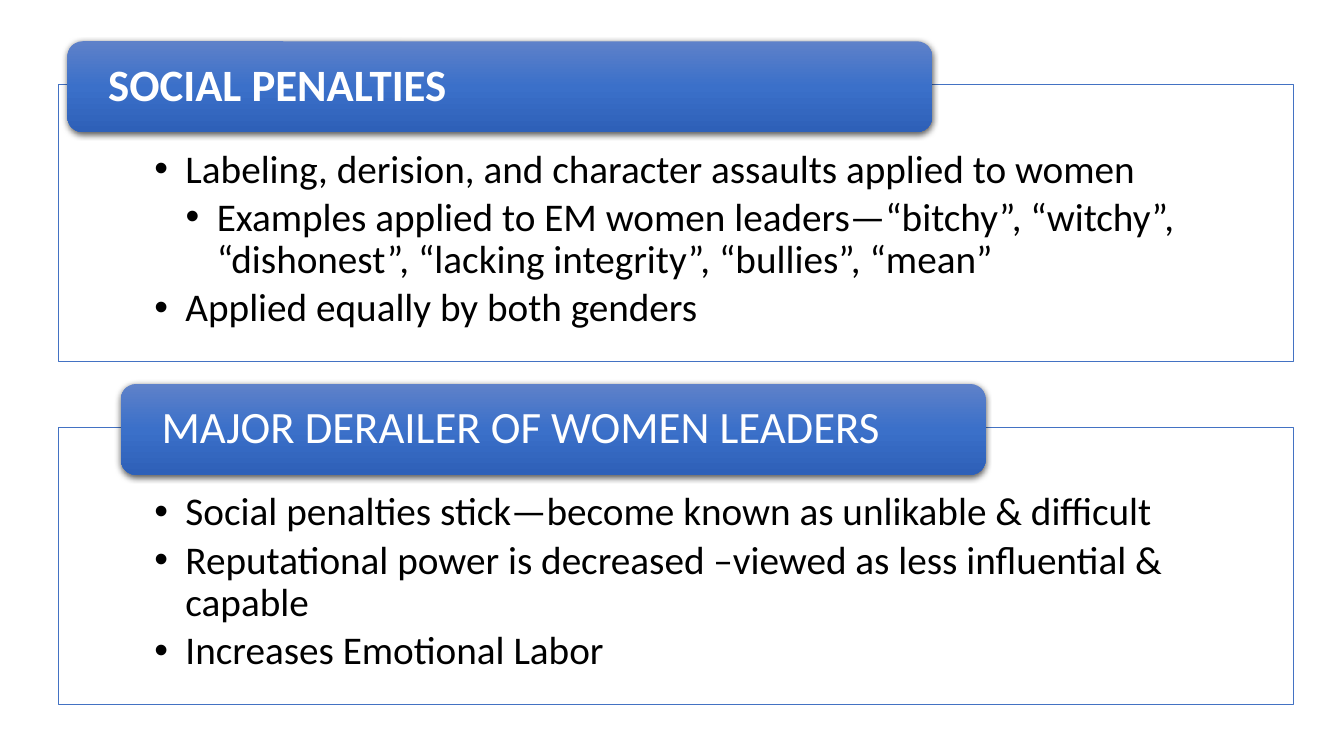
from lxml.etree import SubElement
from pptx import Presentation
from pptx.dml.color import RGBColor
from pptx.enum.shapes import MSO_SHAPE
from pptx.enum.text import MSO_ANCHOR, PP_ALIGN
from pptx.oxml import parse_xml
from pptx.oxml.ns import nsdecls, qn
from pptx.util import Inches, Pt

WIDTH, HEIGHT = 13.33, 7.5
FRAME_LEFT, FRAME_WIDTH, FRAME_HEIGHT = 0.58, 12.25, 2.75
FIRST_TOP, SECTION_STEP = 0.84, 3.4
TAB_WIDTH, TAB_HEIGHT = 0.7 * FRAME_WIDTH, 0.9
TAB_RISE = 0.43
INDENT = 0.31
TAB_GRADIENT = [(0, "5E81C9"), (50, "3B70C9"), (100, "2E60B8")]

# Heading, heading is bold, heading offset from the frame, bullets as (depth, text)
SECTIONS = [
    ("SOCIAL PENALTIES", True, 0.09, [
        (1, "Labeling, derision, and character assaults applied to women"),
        (2, "Examples applied to EM women leaders—“bitchy”, “witchy”, "
            "“dishonest”, “lacking integrity”, “bullies”, “mean”"),
        (1, "Applied equally by both genders"),
    ]),
    ("MAJOR DERAILER OF WOMEN LEADERS", False, 0.62, [
        (1, "Social penalties stick—become known as unlikable & difficult"),
        (1, "Reputational power is decreased –viewed as less influential & capable"),
        (1, "Increases Emotional Labor"),
    ]),
]


def color(value):
    return RGBColor.from_string(value)


def write_text(paragraph, text, size=28, fill="000000", bold=False):
    paragraph.alignment = PP_ALIGN.LEFT
    paragraph.line_spacing = 0.9
    run = paragraph.add_run()
    run.text = text
    run.font.name = "Calibri"
    run.font.size = Pt(size)
    run.font.bold = bold
    run.font.color.rgb = color(fill)


def add_box(slide, kind, left, top, width, height, insets, anchor):
    """Add a shadowless shape whose text keeps the given left, top, right and bottom insets."""
    shape = slide.shapes.add_shape(
        kind, Inches(left), Inches(top), Inches(width), Inches(height))
    shape.shadow.inherit = False
    frame = shape.text_frame
    frame.word_wrap = True
    frame.vertical_anchor = anchor
    frame.margin_left, frame.margin_top, frame.margin_right, frame.margin_bottom = map(
        Inches, insets)
    return shape


def set_bullet(paragraph, depth):
    properties = paragraph._p.get_or_add_pPr()
    properties.set("marL", str(Inches(INDENT * depth)))
    properties.set("indent", str(-Inches(INDENT)))
    bullet_color = SubElement(properties, qn("a:buClr"))
    SubElement(bullet_color, qn("a:srgbClr"), val="000000")
    SubElement(properties, qn("a:buFont"), typeface="Arial")
    SubElement(properties, qn("a:buChar"), char="•")


def add_bullet_frame(slide, left, top, bullets):
    shape = add_box(slide, MSO_SHAPE.RECTANGLE, left, top, FRAME_WIDTH, FRAME_HEIGHT,
                    (0.95, 0.64, 0.95, 0.22), MSO_ANCHOR.TOP)
    shape.fill.solid()
    shape.fill.fore_color.rgb = color("FFFFFF")
    fill_color = shape._element.spPr.find(qn("a:solidFill"))[0]
    SubElement(fill_color, qn("a:alpha"), val="90000")
    shape.line.color.rgb = color("4372C3")
    shape.line.width = Pt(0.75)
    for index, (depth, text) in enumerate(bullets):
        frame = shape.text_frame
        paragraph = frame.add_paragraph() if index else frame.paragraphs[0]
        paragraph.level = depth
        set_bullet(paragraph, depth)
        if index:
            paragraph.space_before = Pt(4.2)
        write_text(paragraph, text)


def add_heading_tab(slide, left, top, heading, bold):
    shape = add_box(slide, MSO_SHAPE.ROUNDED_RECTANGLE, left, top, TAB_WIDTH, TAB_HEIGHT,
                    (0.36, 0, 0.36, 0), MSO_ANCHOR.MIDDLE)
    shape.adjustments[0] = 0.167
    shape.line.fill.background()
    properties = shape._element.spPr
    stops = "".join(f'<a:gs pos="{position * 1000}"><a:srgbClr val="{value}"/></a:gs>'
                    for position, value in TAB_GRADIENT)
    properties.find(qn("a:prstGeom")).addnext(parse_xml(
        f'<a:gradFill {nsdecls("a")} rotWithShape="1"><a:gsLst>{stops}</a:gsLst>'
        '<a:lin ang="5400000" scaled="0"/></a:gradFill>'))
    properties.find(qn("a:effectLst")).append(parse_xml(
        f'<a:outerShdw {nsdecls("a")} blurRad="{Pt(4.5)}" dist="{Pt(1.5)}" dir="5400000" '
        'algn="ctr" rotWithShape="0"><a:srgbClr val="000000"><a:alpha val="63000"/>'
        '</a:srgbClr></a:outerShdw>'))
    write_text(shape.text_frame.paragraphs[0], heading, size=32, fill="FFFFFF", bold=bold)


def add_section(slide, left, top, heading, bold, tab_offset, bullets):
    """Place a bullet frame with its heading tab across the top edge."""
    add_bullet_frame(slide, left, top, bullets)
    add_heading_tab(slide, left + tab_offset, top - TAB_RISE, heading, bold)


def main():
    presentation = Presentation()
    presentation.slide_width = Inches(WIDTH)
    presentation.slide_height = Inches(HEIGHT)
    slide = presentation.slides.add_slide(presentation.slide_layouts[6])
    for index, section in enumerate(SECTIONS):
        add_section(slide, FRAME_LEFT, FIRST_TOP + index * SECTION_STEP, *section)
    presentation.save("out.pptx")


if __name__ == "__main__":
    main()
